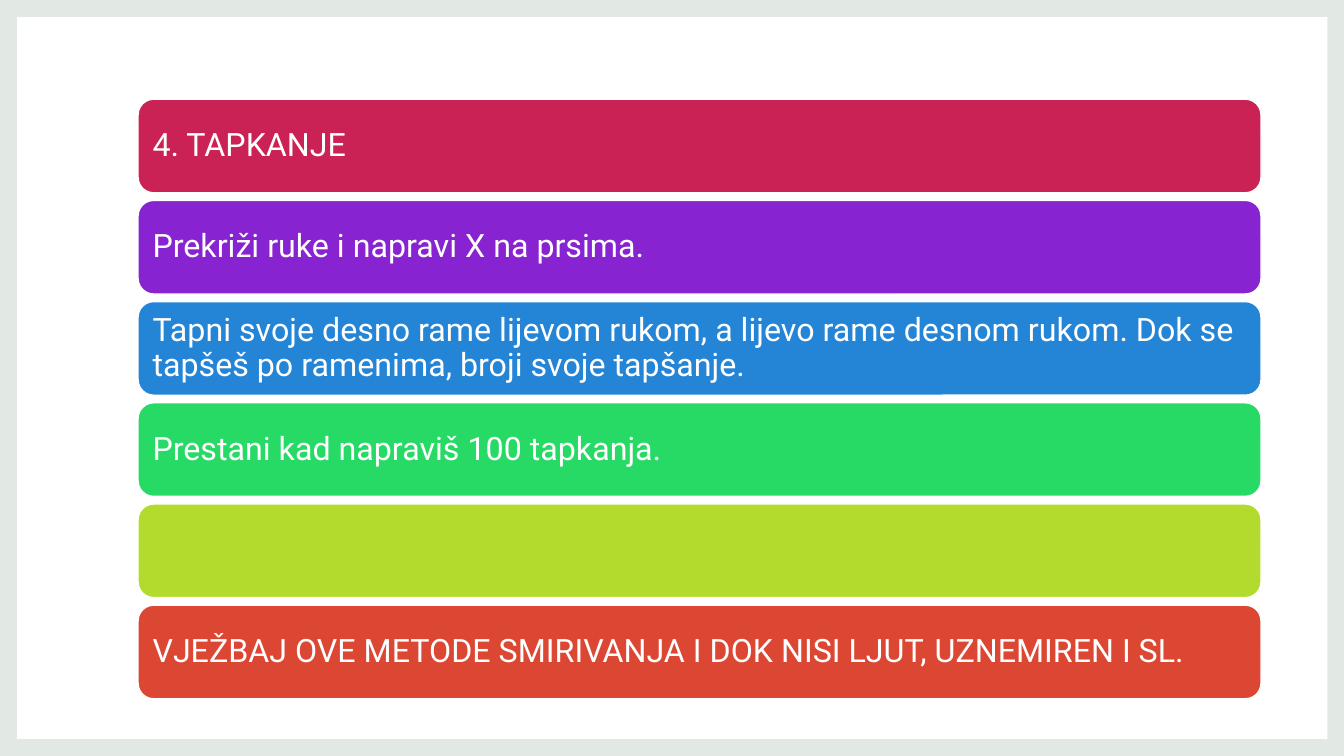
import pptx
import pptx.util
import pptx.dml.color
import pptx.enum.shapes
import pptx.enum.text
from pptx.util import Cm

RGBColor = pptx.dml.color.RGBColor
MSO_SHAPE = pptx.enum.shapes.MSO_SHAPE

WHITE = RGBColor(0xFF, 0xFF, 0xFF)
PALE_GREEN = RGBColor(0xE2, 0xE8, 0xE4)
CRIMSON = RGBColor(0xCA, 0x22, 0x55)
PURPLE = RGBColor(0x87, 0x23, 0xD0)
BLUE = RGBColor(0x24, 0x84, 0xD6)
GREEN = RGBColor(0x27, 0xDA, 0x65)
LIME = RGBColor(0xB3, 0xDB, 0x2E)
RED = RGBColor(0xDC, 0x47, 0x34)

BAR_LEFT, BAR_TOP = 3.48, 2.5
BAR_WIDTH, BAR_HEIGHT = 28.3, 2.36
BAR_PITCH = 2.55

STEPS = [
    (CRIMSON, "4. TAPKANJE"),
    (PURPLE, "Prekriži ruke i napravi X na prsima."),
    (BLUE, "Tapni svoje desno rame lijevom rukom, a lijevo rame desnom rukom. "
           "Dok se tapšeš po ramenima, broji svoje tapšanje."),
    (GREEN, "Prestani kad napraviš 100 tapkanja."),
    (LIME, ""),
    (RED, "VJEŽBAJ OVE METODE SMIRIVANJA I DOK NISI LJUT, UZNEMIREN I SL."),
]

prs = pptx.Presentation()
prs.slide_width, prs.slide_height = Cm(33.87), Cm(19.05)
s = prs.slides.add_slide(prs.slide_layouts[6])


def add_filled(kind, left, top, width, height, color):
    sp = s.shapes.add_shape(kind, Cm(left), Cm(top), Cm(width), Cm(height))
    sp.shadow.inherit = False
    sp.fill.solid()
    sp.fill.fore_color.rgb = color
    sp.line.fill.background()
    return sp


# Frame and white panel
add_filled(MSO_SHAPE.RECTANGLE, 0, 0, 33.87, 19.05, PALE_GREEN)
add_filled(MSO_SHAPE.RECTANGLE, 0.43, 0.43, 33.02, 18.19, WHITE)

# Stacked step bars
for i, (color, text) in enumerate(STEPS):
    sp = add_filled(MSO_SHAPE.ROUNDED_RECTANGLE, BAR_LEFT, BAR_TOP + i * BAR_PITCH,
                    BAR_WIDTH, BAR_HEIGHT, color)
    sp.line.color.rgb = WHITE
    sp.line.width = pptx.util.Pt(1)
    if not text:
        continue
    tf = sp.text_frame
    tf.text = text
    tf.word_wrap = True
    tf.vertical_anchor = pptx.enum.text.MSO_ANCHOR.MIDDLE
    tf.margin_left = tf.margin_right = tf.margin_top = tf.margin_bottom = Cm(0.25)
    p = tf.paragraphs[0]
    p.alignment = pptx.enum.text.PP_ALIGN.LEFT
    p.line_spacing = 0.9
    r = p.runs[0]
    r.font.name = "Roboto"
    r.font.size = pptx.util.Pt(23)
    r.font.color.rgb = WHITE

prs.save("out.pptx")
